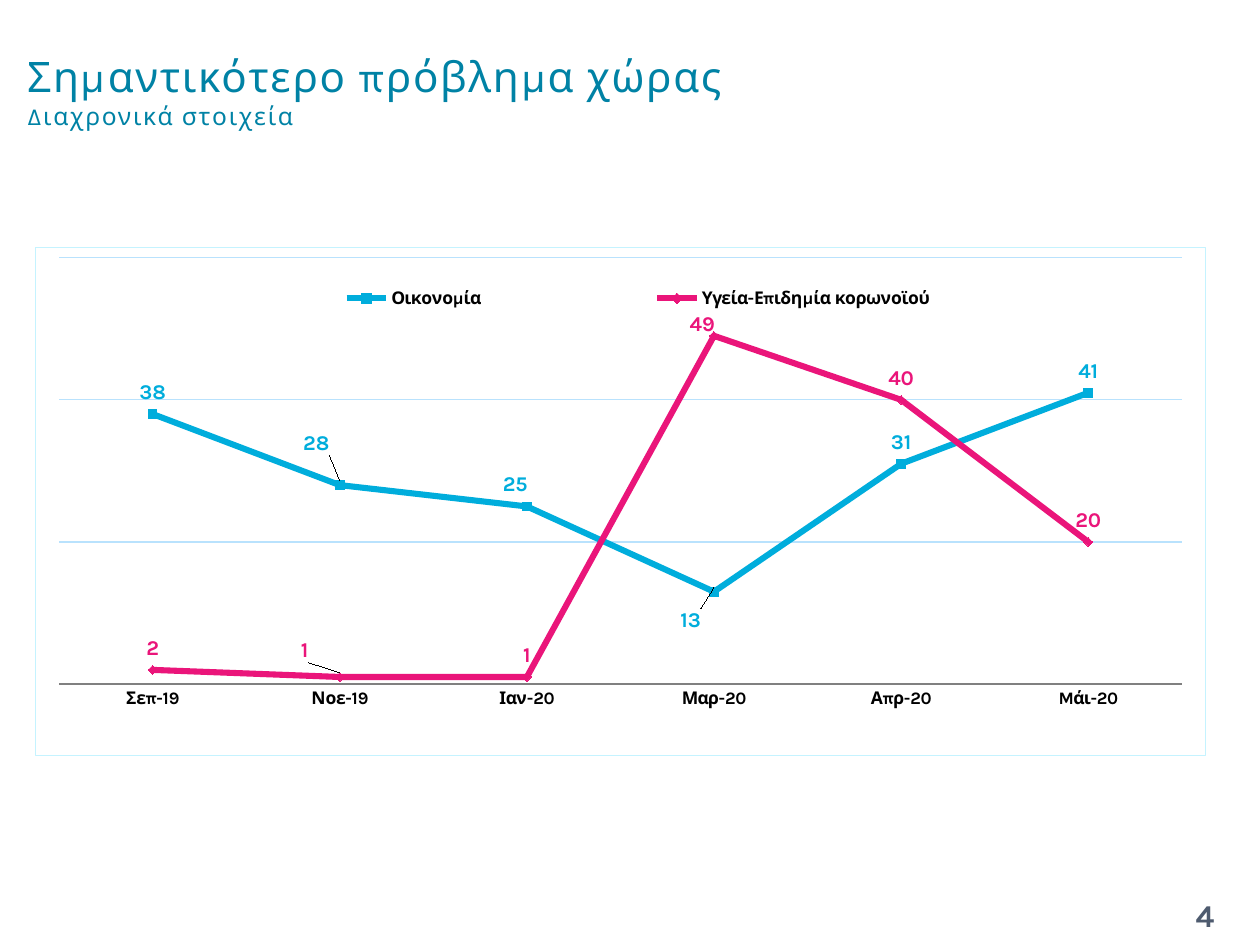
from lxml import etree
from pptx import Presentation
from pptx.chart.data import CategoryChartData
from pptx.dml.color import RGBColor
from pptx.enum.chart import XL_CHART_TYPE as ChartType, XL_LABEL_POSITION as LabelPos
from pptx.enum.chart import XL_LEGEND_POSITION as LegendPos, XL_TICK_MARK as Tick
from pptx.enum.text import MSO_ANCHOR as Anchor, PP_ALIGN as Align
from pptx.oxml import parse_xml
from pptx.oxml.ns import nsdecls, qn
from pptx.util import Pt

PX = 914400 / 126
FONT = "Karla"


def style(font, color, size=None, bold=None):
    font.name = FONT
    font.color.rgb = RGBColor.from_string(color)
    font.bold = bold
    if size:
        font.size = Pt(size)


def set_layout(parent, index, target=None, **numbers):
    for old in parent.findall(qn("c:layout")):
        parent.remove(old)
    layout = parse_xml(f"<c:layout {nsdecls('c')}><c:manualLayout/></c:layout>")
    parent.insert(index, layout)
    values = {"layoutTarget": target} if target else {}
    if "w" in numbers:
        values.update(xMode="edge", yMode="edge")
    for tag, value in (values | numbers).items():
        etree.SubElement(layout[0], qn(f"c:{tag}")).set("val", str(value))


prs = Presentation()
prs.slide_width, prs.slide_height = round(1260 * PX), round(945 * PX)
slide = prs.slides.add_slide(prs.slide_layouts[6])

heading, page = [
    slide.shapes.add_textbox(*(round(n * PX) for n in box)).text_frame
    for box in ((15, 16, 863, 149), (1155, 890, 100, 50))
]
for frame in (heading, page):
    frame.word_wrap = True
    frame.vertical_anchor = Anchor.MIDDLE

title = heading.paragraphs[0]
style(title.font, "0082A5")
for text, size in (("Σημαντικότερο πρόβλημα χώρας", 24), ("Διαχρονικά στοιχεία", 14)):
    if title.runs:
        title.add_line_break()
    run = title.add_run()
    run.text = text
    run.font.size = Pt(size)
    run.font._element.set("spc", "100")

number = page.paragraphs[0]
number.text = "4"
number.alignment = Align.CENTER
style(number.font, "4E5B6F", 18, True)

problems = [
    ("Οικονομία", (38, 28, 25, 13, 31, 41), "00ADDC",
     {1: (-0.02, -0.04), 2: (-0.01, 0), 3: (-0.02, 0.1)}),
    ("Υγεία-Επιδημία κορωνοϊού", (2, 1, 1, 49, 40, 20), "EA157A",
     {1: (-0.03, -0.01), 3: (-0.01, 0.02)}),
]
data = CategoryChartData()
data.categories = ["Σεπ-19", "Νοε-19", "Ιαν-20", "Μαρ-20", "Απρ-20", "Mάι-20"]
for name, values, color, shifts in problems:
    data.add_series(name, values)
chart = slide.shapes.add_chart(
    ChartType.LINE, *(round(n * PX) for n in (35, 247, 1171, 509)), data
).chart
style(chart.font, "000000", 18)
chart.has_title = False

months, share = chart.category_axis, chart.value_axis
months.major_tick_mark = months.minor_tick_mark = Tick.NONE
style(months.tick_labels.font, "000000", 10, True)
months.format.line.color.rgb = RGBColor.from_string("808080")
months.format.line.width = Pt(1)
share.minimum_scale, share.maximum_scale, share.major_unit = 0, 60, 20
share.visible = False
share.has_major_gridlines = True
share.major_gridlines.format.line.color.rgb = RGBColor.from_string("B9E2FD")
share.major_gridlines.format.line.width = Pt(0.75)

chart.has_legend = True
chart.legend.position = LegendPos.BOTTOM
chart.legend.include_in_layout = False
style(chart.legend.font, "000000", 10, True)
set_layout(chart.legend._element, 1, x=0.12, y=0.07, w=0.79, h=0.06)

plot = chart.plots[0]
plot.vary_by_categories = False
set_layout(plot._element.getparent(), 0, "inner", x=0.02, y=0.02, w=0.96, h=0.84)

for series, (name, values, color, shifts) in zip(plot.series, problems):
    series.smooth = False
    series.marker.style = None
    series.format.line.color.rgb = RGBColor.from_string(color)
    series.format.line.width = Pt(3.5)
    labels = series.data_labels
    labels.show_value = True
    labels.position = LabelPos.ABOVE
    style(labels.font, color, 12, True)
    for index, (dx, dy) in shifts.items():
        label = series.points[index].data_label
        style(label.font, color, 12, True)
        label.position = LabelPos.ABOVE
        set_layout(label._dLbl, 1, x=dx, y=dy)

border = parse_xml(
    f'<c:spPr {nsdecls("c", "a")}><a:noFill/><a:ln w="9525"><a:solidFill>'
    '<a:srgbClr val="C5F3FF"/></a:solidFill></a:ln></c:spPr>'
)
chart._chartSpace.find(qn("c:chart")).addnext(border)

prs.save("out.pptx")
